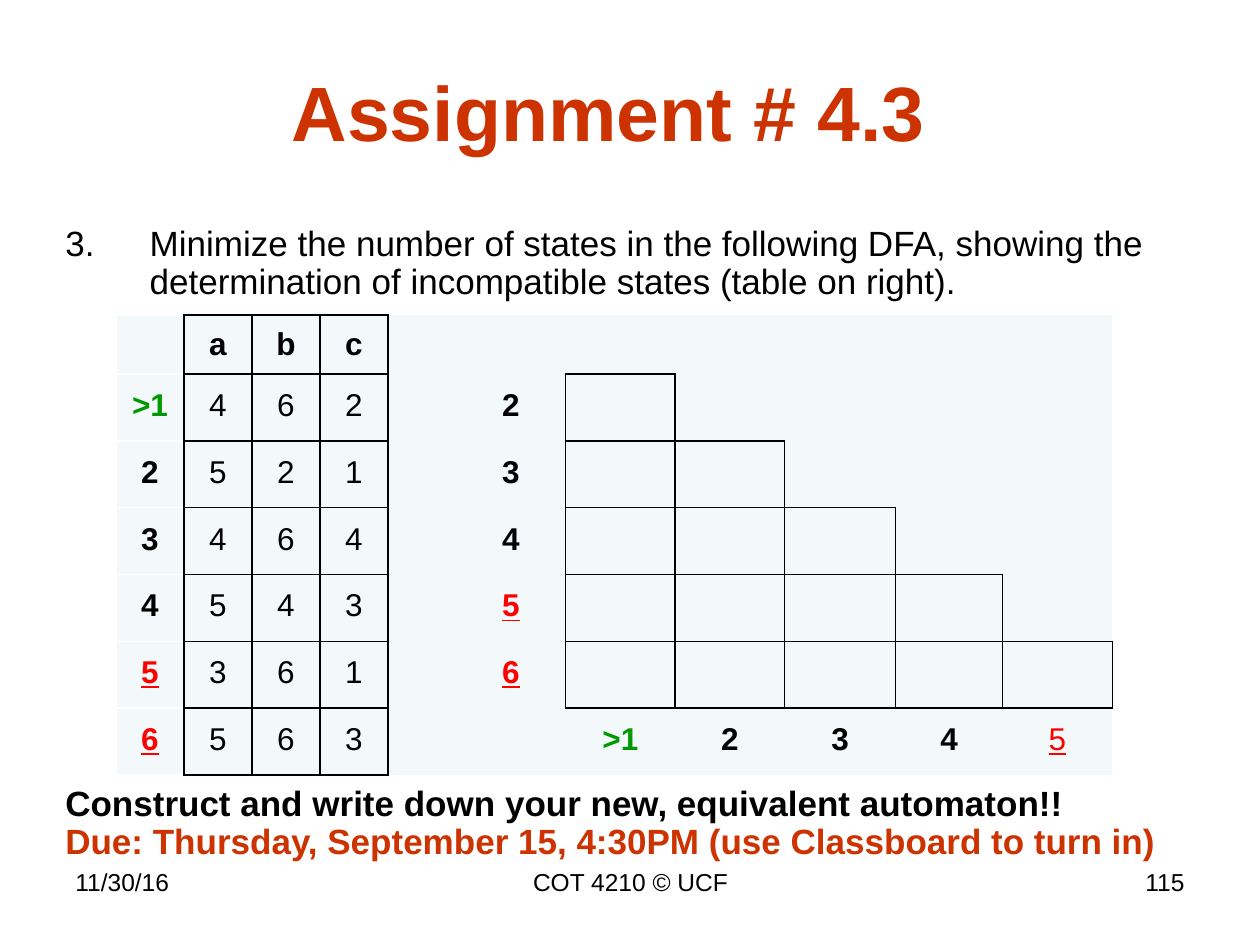
import dataclasses
import typing

import pptx
import pptx.dml.color
import pptx.enum.text
import pptx.oxml.ns
import pptx.util
from lxml import etree

Inches = pptx.util.Inches
Pt = pptx.util.Pt
Align = pptx.enum.text.PP_ALIGN
Anchor = pptx.enum.text.MSO_ANCHOR

COLORS = {"black": "000000", "white": "FFFFFF", "rust": "CC3300",
          "green": "009900", "red": "FF0000", "pale": "F3F9FA"}
FONT = "Arial"


@dataclasses.dataclass
class Line:
    text: str
    size: float = 20
    color: str = "black"
    bold: bool = False
    under: bool = False
    form: dict = dataclasses.field(default_factory=dict)


@dataclasses.dataclass
class Box:
    left: float
    top: float
    width: float
    height: float
    lines: list
    anchor: typing.Any = Anchor.TOP


LABELS = {">1": Line(">1", 18, "green", True),
          "5": Line("5", 18, "red", True, True),
          "6": Line("6", 18, "red", True, True)}
STATES = [">1", "2", "3", "4", "5", "6"]
INPUTS = "abc"
MOVES = ["462", "521", "464", "543", "361", "563"]
WIDTHS = [0.54] * 5 + [0.87, 0.87, 0.87, 0.88, 0.85, 0.87]
HEIGHTS = [0.47] + [0.53] * 6
SIDE = 5    # column of the row labels of the pair table
SIDES = {"L": (0, -1), "R": (0, 1), "T": (-1, 0), "B": (1, 0)}

BODY = {"line_spacing": 0.9, "space_before": Pt(0)}
BOXES = [
    Box(0.33, 0.25, 9, 1.25, [
        Line("Assignment # 4.3", 44, "rust", True, form={"alignment": Align.CENTER})],
        Anchor.MIDDLE),
    Box(0.42, 1.75, 9, 4.95, [
        Line("Minimize the number of states in the following DFA, showing the "
             "determination of incompatible states (table on right).",
             form=BODY | {"space_before": Pt(4)}),
        Line("Construct and write down your new, equivalent automaton!!",
             bold=True, form=BODY | {"space_before": Pt(276.5)}),
        Line("Due: Thursday, September 15, 4:30PM (use Classboard to turn in)",
             color="rust", bold=True, form=BODY)]),
    Box(0.5, 6.83, 2.33, 0.52, [Line("11/30/16", 14)]),
    Box(3.42, 6.83, 3.17, 0.52, [
        Line("COT 4210 © UCF", 14, form={"alignment": Align.CENTER})]),
    Box(7.17, 6.83, 2.33, 0.52, [
        Line("115", 14, form={"alignment": Align.RIGHT})]),
]


def shade(name: str) -> pptx.dml.color.RGBColor:
    return pptx.dml.color.RGBColor.from_string(COLORS[name])


def apply(target: typing.Any, values: dict) -> None:
    for name, value in values.items():
        setattr(target, name, value)


def write(para: typing.Any, line: Line) -> None:
    apply(para, line.form)
    run = para.add_run()
    run.text = line.text
    apply(run.font, {"name": FONT, "size": Pt(line.size), "bold": line.bold,
                     "underline": line.under})
    run.font.color.rgb = shade(line.color)


def number(para: typing.Any, start: int) -> None:
    """Number a paragraph, with a hanging indent."""
    props = para._p.get_or_add_pPr()
    props.set("marL", str(Inches(0.67)))
    props.set("indent", str(-Inches(0.67)))
    etree.SubElement(props, pptx.oxml.ns.qn("a:buAutoNum"),
                     type="arabicPeriod", startAt=str(start))


def add_box(slide: typing.Any, box: Box) -> typing.Any:
    size = map(Inches, (box.left, box.top, box.width, box.height))
    frame = slide.shapes.add_textbox(*size).text_frame
    apply(frame, {"word_wrap": True, "vertical_anchor": box.anchor})
    for i, line in enumerate(box.lines):
        write(frame.add_paragraph() if i else frame.paragraphs[0], line)
    return frame


def boxed(row: int, col: int) -> bool:
    """Tell if a cell is in the move grid or the stairs of state pairs."""
    grid = 1 <= col <= len(INPUTS) and 0 <= row < len(HEIGHTS)
    return grid or (SIDE < col <= SIDE + row and 1 <= row < len(STATES))


def border(cell: typing.Any, row: int, col: int) -> None:
    props = cell._tc.get_or_add_tcPr()
    for i, (side, (down, right)) in enumerate(SIDES.items()):
        edge = etree.Element(pptx.oxml.ns.qn("a:ln" + side), w=str(Pt(1)))
        props.insert(i, edge)
        if boxed(row, col) or boxed(row + down, col + right):
            color = "black"
        elif col == 0:
            color = "white"
        else:
            etree.SubElement(edge, pptx.oxml.ns.qn("a:noFill"))
            continue
        fill = etree.SubElement(edge, pptx.oxml.ns.qn("a:solidFill"))
        etree.SubElement(fill, pptx.oxml.ns.qn("a:srgbClr"), val=COLORS[color])


def label(state: str) -> Line:
    return LABELS.get(state, Line(state, 18, bold=True))


def entries() -> dict:
    """Map (row, column) to the line in that cell."""
    found = {(0, c): label(name) for c, name in enumerate(INPUTS, 1)}
    for r, (state, moves) in enumerate(zip(STATES, MOVES), 1):
        found[r, 0] = label(state)
        found |= {(r, c): Line(move, 18) for c, move in enumerate(moves, 1)}
    last = len(STATES)
    for i in range(1, last):
        found[i, SIDE] = label(STATES[i])
        found[last, SIDE + i] = label(STATES[i - 1])
    found[last, SIDE + last - 1] = dataclasses.replace(LABELS["5"], bold=False)
    return found


def add_grid(slide: typing.Any) -> None:
    size = map(Inches, (0.92, 2.5, sum(WIDTHS), sum(HEIGHTS)))
    table = slide.shapes.add_table(len(HEIGHTS), len(WIDTHS), *size).table
    apply(table, {"first_row": False, "horz_banding": False})
    for col, width in zip(table.columns, WIDTHS):
        col.width = Inches(width)
    for row, height in zip(table.rows, HEIGHTS):
        row.height = Inches(height)
    lines = entries()
    for r in range(len(HEIGHTS)):
        for c in range(len(WIDTHS)):
            cell = table.cell(r, c)
            apply(cell, {"vertical_anchor": Anchor.MIDDLE,
                         "margin_left": Inches(0.06), "margin_right": Inches(0.06),
                         "margin_top": 0, "margin_bottom": 0})
            cell.fill.solid()
            cell.fill.fore_color.rgb = shade("pale")
            border(cell, r, c)
            if (r, c) in lines:
                para = cell.text_frame.paragraphs[0]
                apply(para, {"alignment": Align.CENTER,
                             "line_spacing": Pt(18) if r else 1.0})
                write(para, lines[r, c])


def main() -> None:
    deck = pptx.Presentation()
    apply(deck, {"slide_width": Inches(10), "slide_height": Inches(7.5)})
    slide = deck.slides.add_slide(deck.slide_layouts[6])
    frames = [add_box(slide, box) for box in BOXES]
    number(frames[1].paragraphs[0], 3)
    add_grid(slide)
    deck.save("out.pptx")


if __name__ == "__main__":
    main()
